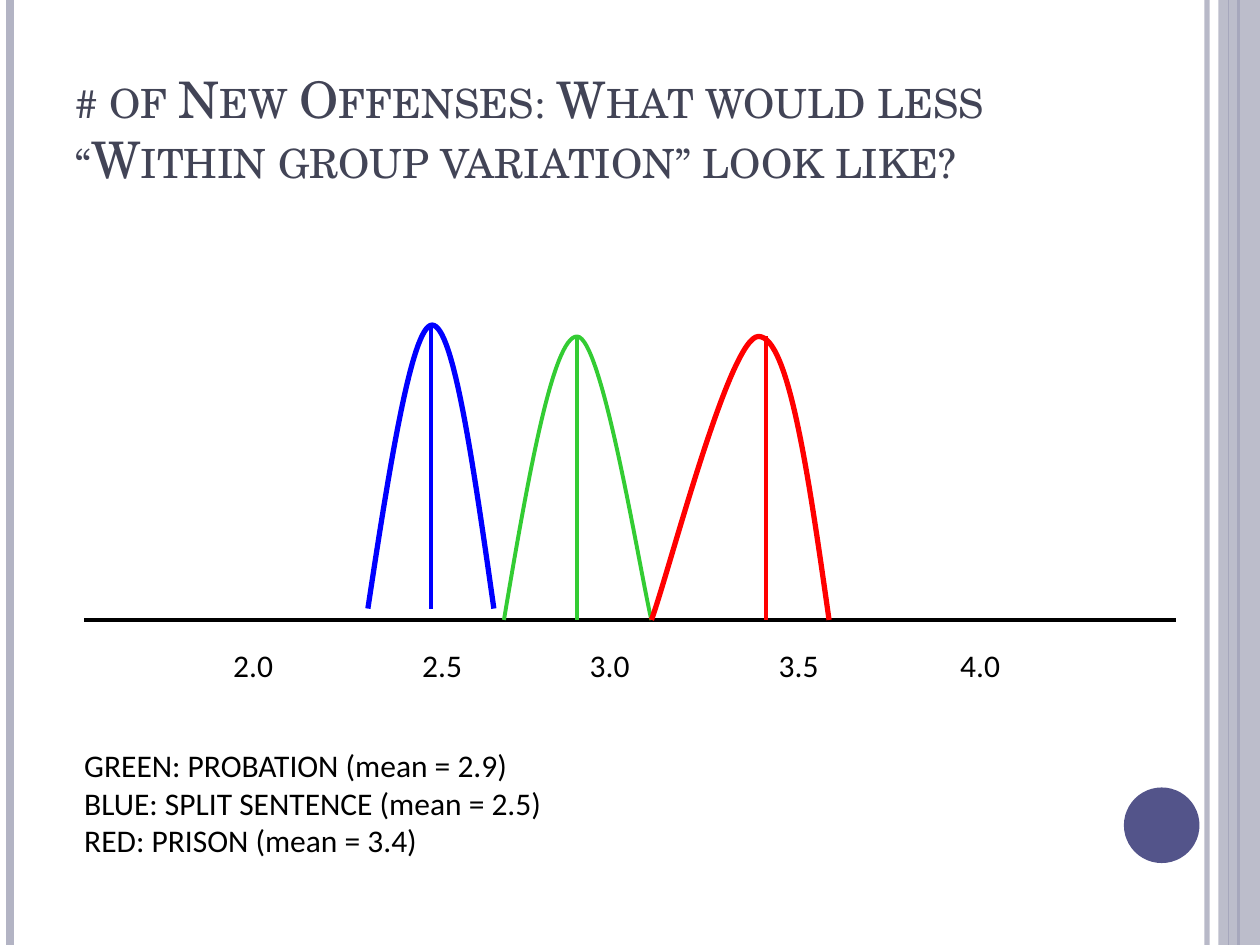
from lxml.etree import SubElement
from pptx import Presentation
from pptx.dml.color import RGBColor
from pptx.enum.shapes import MSO_CONNECTOR, MSO_SHAPE
from pptx.enum.text import MSO_ANCHOR, MSO_AUTO_SIZE, PP_ALIGN
from pptx.oxml.ns import qn
from pptx.util import Inches, Pt

# Content
TITLE = "# of New Offenses: What would less “Within group variation” look like?"
LEGEND = ["GREEN: PROBATION (mean = 2.9)",
          "BLUE: SPLIT SENTENCE (mean = 2.5)",
          "RED: PRISON (mean = 3.4)"]
AXIS = [("2.0", 2.01), ("2.5", 3.51), ("3.0", 4.84), ("3.5", 6.34), ("4.0", 7.78)]
AXIS_Y = 4.92
# Side rules: x, colour, width, opacity
RULES = [(9.58, "B3B4C4", 3, 93), (0.08, "B3B4C4", 4.5, 100),
         (9.83, "53548A", 1.5, 100), (9.75, "53548A", 0.75, 100)]
# Groups: colour, curve width, mean x, base y, top y, two joined Bezier segments
GROUPS = [
    ("33CC33", 2.25, 4.58, 4.92, 2.67,
     [(4, 4.92), (4.19, 3.79), (4.39, 2.67), (4.58, 2.67),
      (4.78, 2.67), (5.08, 4.54), (5.17, 4.92)]),
    ("FF0000", 3, 6.08, 4.92, 2.67,
     [(6.58, 4.92), (6.42, 3.79), (6.26, 2.67), (6.02, 2.67),
      (5.79, 2.67), (5.31, 4.54), (5.17, 4.92)]),
    ("0000FF", 3, 3.42, 4.83, 2.58,
     [(2.92, 4.83), (3.09, 3.71), (3.27, 2.58), (3.43, 2.58),
      (3.6, 2.58), (3.76, 3.71), (3.92, 4.83)]),
]

prs = Presentation()
prs.slide_width, prs.slide_height = Inches(10), Inches(7.5)
s = prs.slides.add_slide(prs.slide_layouts[5])


def rgb(color):
    return RGBColor.from_string(color)


def set_alpha(fill_parent, percent):
    if percent < 100:
        clr = fill_parent.find(qn("a:solidFill"))[0]
        SubElement(clr, qn("a:alpha"), val=str(percent * 1000))


def add_line(x1, y1, x2, y2, color, width, opacity=100):
    ln = s.shapes.add_connector(MSO_CONNECTOR.STRAIGHT, *map(Inches, (x1, y1, x2, y2)))
    ln.line.color.rgb, ln.line.width = rgb(color), Pt(width)
    set_alpha(ln._element.spPr.find(qn("a:ln")), opacity)
    SubElement(ln._element.spPr, qn("a:effectLst"))


def add_block(kind, box, color, opacity=100):
    sp = s.shapes.add_shape(kind, *map(Inches, box))
    sp.shadow.inherit = False
    sp.fill.solid()
    sp.fill.fore_color.rgb = rgb(color)
    sp.line.fill.background()
    set_alpha(sp._element.spPr, opacity)


def add_curve(points, color, width):
    """Freeform through every third point; the others steer its Bezier segments."""
    dots = [(Inches(x), Inches(y)) for x, y in points]
    fb = s.shapes.build_freeform(*dots[0])
    fb.add_line_segments(dots[3::3], close=False)
    sp = fb.convert_to_shape()
    sp.shadow.inherit = False
    sp.fill.background()
    sp.line.color.rgb, sp.line.width = rgb(color), Pt(width)
    for k, seg in enumerate(list(sp._element.iter(qn("a:lnTo")))):
        outline = seg.getparent()
        outline.remove(seg)
        curve = SubElement(outline, qn("a:cubicBezTo"))
        for x, y in dots[3 * k + 1:3 * k + 4]:
            SubElement(curve, qn("a:pt"), x=str(x - sp.left), y=str(y - sp.top))


def write(tf, lines, color, **font):
    tf.text = "\n".join(lines)
    for p in tf.paragraphs:
        for r in p.runs:
            r.font.color.rgb = rgb(color)
            for name, value in font.items():
                setattr(r.font, name, value)


def add_text(box, lines, wrap):
    tf = s.shapes.add_textbox(*map(Inches, box)).text_frame
    tf.word_wrap = wrap
    write(tf, lines, "000000", name="Calibri", size=Pt(18))
    return tf


# Side decoration
for x, color, width, opacity in RULES:
    add_line(x, 0, x, 7.5, color, width, opacity)
add_block(MSO_SHAPE.RECTANGLE, (9.67, 0, 0.33, 7.5), "B3B4C4", 87)
add_block(MSO_SHAPE.OVAL, (8.92, 6.25, 0.6, 0.6), "53548A")

# Title
title = s.shapes.title
title.left, title.top, title.width, title.height = map(Inches, (0.5, 0.3, 8.17, 1.25))
tf = title.text_frame
tf.vertical_anchor, tf.auto_size = MSO_ANCHOR.BOTTOM, MSO_AUTO_SIZE.NONE
write(tf, [TITLE], "424456", name="TeX Gyre Schola", size=Pt(28.8))
tf.paragraphs[0].alignment = PP_ALIGN.LEFT
tf.paragraphs[0].runs[0].font._element.set("cap", "small")

# Axis, with its labels centred on tab stops
add_line(0.67, AXIS_Y, 9.33, AXIS_Y, "000000", 2.25)
left = 0.75
tf = add_text((left, 5.08, 8.58, 0.4), ["".join("\t" + label for label, _ in AXIS)], True)
tabs = SubElement(tf.paragraphs[0]._p.get_or_add_pPr(), qn("a:tabLst"))
for _, x in AXIS:
    SubElement(tabs, qn("a:tab"), pos=str(Inches(x - left) - tf.margin_left), algn="ctr")

# Group curves and means
for color, width, mean, base, top, points in GROUPS:
    add_line(mean, base, mean, top, color, 2.25)
    add_curve(points, color, width)

# Legend
add_text((0.57, 5.87, 4.61, 1), LEGEND, False)

prs.save("out.pptx")
